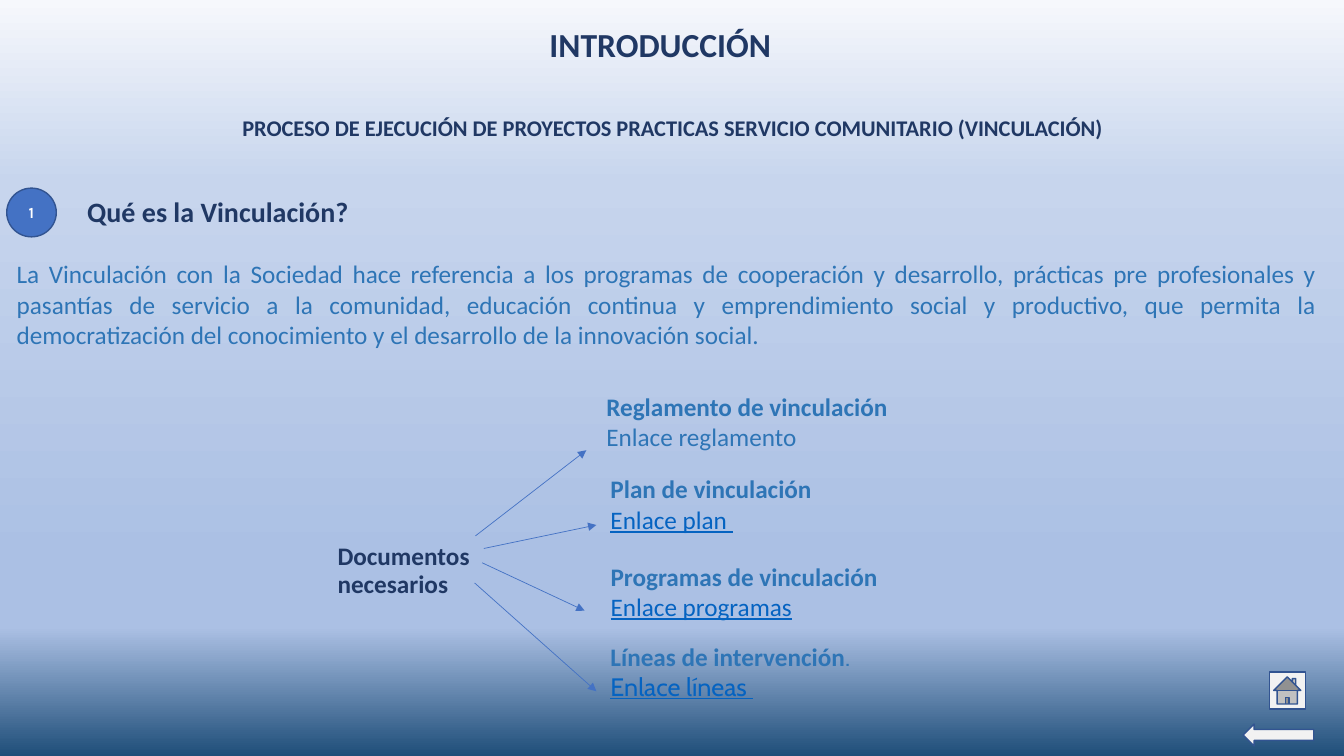
from lxml.etree import SubElement
from pptx import Presentation
from pptx.dml.color import RGBColor
from pptx.enum.shapes import MSO_CONNECTOR, MSO_SHAPE
from pptx.enum.text import MSO_ANCHOR, MSO_AUTO_SIZE, PP_ALIGN
from pptx.oxml.ns import qn
from pptx.util import Inches, Pt

COLS, ROWS = 160, 90
NAVY, BLUE, LINK = "203864", "2E75B6", "0563C1"
ACCENT, OUTLINE, PALE = "4472C4", "325491", "F2F2F2"


def rgb(value):
    return RGBColor.from_string(value)


def add_run(p, text, size=18, color=BLUE, font="Calibri", bold=False, underline=False):
    r = p.add_run()
    r.text = text
    r.font.size, r.font.name = Pt(size), font
    r.font.bold, r.font.underline = bold, underline
    r.font.color.rgb = rgb(color)
    return r


class Deck:
    """Holds the slide and places elements on a grid of 160 by 90 cells."""

    def __init__(self):
        self.prs = Presentation()
        self.prs.slide_width, self.prs.slide_height = Inches(13.33), Inches(7.5)
        self.s = self.prs.slides.add_slide(self.prs.slide_layouts[6])

    def x(self, cols):
        return round(self.prs.slide_width * cols / COLS)

    def y(self, rows):
        return round(self.prs.slide_height * rows / ROWS)

    def box(self, left, top, width, height):
        return self.x(left), self.y(top), self.x(width), self.y(height)

    def background(self, stops):
        fill = self.s.background.fill
        fill.gradient()
        fill.gradient_angle = 270
        # The public interface keeps two stops only
        gs_list = self.s.element.find(".//" + qn("a:gsLst"))
        for gs in list(gs_list):
            gs_list.remove(gs)
        for percent, color in stops:
            gs = SubElement(gs_list, qn("a:gs"), pos=str(percent * 1000))
            SubElement(gs, qn("a:srgbClr"), val=color)

    def text(self, area, paragraphs, align=PP_ALIGN.LEFT, middle=False, wrap=True):
        """Each paragraph is a list of (text, format) runs."""
        tf = self.s.shapes.add_textbox(*self.box(*area)).text_frame
        tf.word_wrap = wrap
        tf.auto_size = MSO_AUTO_SIZE.NONE if middle else MSO_AUTO_SIZE.SHAPE_TO_FIT_TEXT
        tf.vertical_anchor = MSO_ANCHOR.MIDDLE if middle else MSO_ANCHOR.TOP
        for i, runs in enumerate(paragraphs):
            p = tf.add_paragraph() if i else tf.paragraphs[0]
            p.alignment = align
            if middle:
                p.line_spacing = 0.9
            for content, style in runs:
                add_run(p, content, **style)

    def shape(self, kind, area, fill):
        sp = self.s.shapes.add_shape(kind, *self.box(*area))
        sp.shadow.inherit = False
        sp.fill.solid()
        sp.fill.fore_color.rgb = rgb(fill)
        sp.line.color.rgb = rgb(OUTLINE)
        sp.line.width = Pt(1)
        return sp

    def arrow(self, x1, y1, x2, y2):
        c = self.s.shapes.add_connector(
            MSO_CONNECTOR.STRAIGHT, self.x(x1), self.y(y1), self.x(x2), self.y(y2))
        c.line.color.rgb = rgb(ACCENT)
        c.line.width = Pt(0.5)
        SubElement(c.line._get_or_add_ln(), qn("a:tailEnd"), type="triangle")
        SubElement(c._element.spPr, qn("a:effectLst"))


def main():
    deck = Deck()
    deck.background([(0, "F6F8FC"), (24, "C7D5ED"), (74, "ABC0E4"),
                     (83, "ABC0E4"), (100, "1F4E79")])
    strong = dict(color=NAVY, bold=True)

    # Titles
    deck.text((0.1, 10.8, 160, 9.2),
              [[("PROCESO DE EJECUCIÓN DE PROYECTOS PRACTICAS SERVICIO COMUNITARIO "
                 "(VINCULACIÓN)", dict(strong, size=16))]],
              align=PP_ALIGN.CENTER, middle=True)
    deck.text((64.1, 2.2, 29, 6), [[("INTRODUCCIÓN", dict(strong, size=24))]],
              align=PP_ALIGN.CENTER, wrap=False)

    # Numbered question and its answer
    deck.text((9.2, 20.8, 48.2, 9.2),
              [[("Qué es la Vinculación?", dict(strong, size=20))]], middle=True)
    badge = deck.shape(MSO_SHAPE.OVAL, (0.8, 22.4, 5.9, 5.8), ACCENT)
    tf = badge.text_frame
    tf.vertical_anchor = MSO_ANCHOR.MIDDLE
    p = tf.paragraphs[0]
    p.alignment = PP_ALIGN.CENTER
    add_run(p, "1", size=11, color="FFFFFF", font="Karla", bold=True)
    deck.text((0.8, 30.2, 157.1, 12.1),
              [[("La Vinculación con la Sociedad hace referencia a los programas de "
                 "cooperación y desarrollo, prácticas pre profesionales y pasantías de "
                 "servicio a la comunidad, educación continua y emprendimiento social y "
                 "productivo, que permita la democratización del conocimiento y el "
                 "desarrollo de la innovación social.", {})]], align=PP_ALIGN.JUSTIFY)

    # Required documents: heading, link line and arrow for each
    deck.text((39, 63.4, 19.2, 9.2), [[("Documentos necesarios", strong)]], middle=True)
    bold, link = dict(bold=True), dict(color=LINK, underline=True)
    cabin = dict(font="Cabin")
    documents = [
        ((71, 46, 119.2), [("Reglamento de vinculación", bold)],
         ("Enlace reglamento", {}), (56.6, 63.8, 69.8, 53.6)),
        ((71.5, 55.8, 119.2), [("Plan de vinculación", bold)],
         ("Enlace plan ", link), (57.6, 65.3, 71, 62.5)),
        ((71.5, 66.2, 114.4), [("Programas de vinculación", bold)],
         ("Enlace programas", link), (57.4, 67, 69.6, 72.7)),
        ((71.5, 75.7, 119.5), [("Líneas de intervención", bold), (".", cabin)],
         ("Enlace líneas ", dict(link, **cabin)), (56.5, 69.4, 71, 82.3)),
    ]
    for area, heading, link_line, arrow in documents:
        deck.text((*area, 8.5), [heading, [link_line]], align=PP_ALIGN.JUSTIFY)
        deck.arrow(*arrow)

    # Navigation buttons
    deck.shape(MSO_SHAPE.LEFT_ARROW, (148, 86.2, 8.4, 2.6), PALE)
    deck.shape(MSO_SHAPE.ACTION_BUTTON_HOME, (151.1, 80, 4.3, 4.4), PALE)

    deck.prs.save("out.pptx")


if __name__ == "__main__":
    main()
